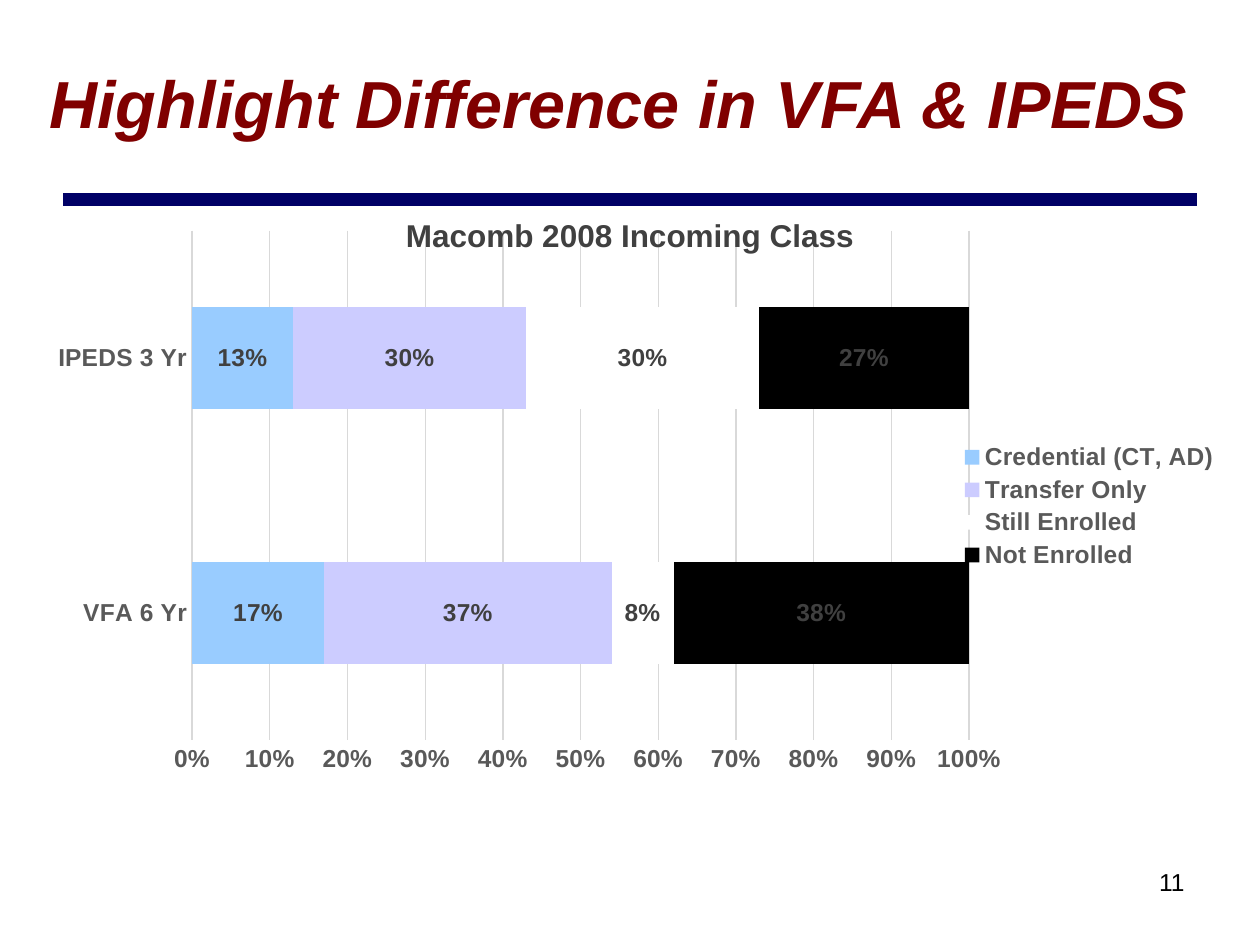
from pptx import Presentation, util as u, oxml
from pptx.chart import data
from pptx.dml import color as dml
from pptx.enum import chart as charts, shapes, text
from pptx.oxml import ns


def rgb(hex_string):
    return dml.RGBColor.from_string(hex_string)


def format_font(font, size, color, bold=False, italic=False):
    font.name = "Arial"
    font.size = u.Pt(size)
    font.bold = bold
    font.italic = italic
    font.color.rgb = rgb(color)


def write_text(frame, content, align="LEFT", anchor="TOP", **font_format):
    frame.word_wrap = True
    frame.vertical_anchor = getattr(text.MSO_ANCHOR, anchor)
    paragraph = frame.paragraphs[0]
    paragraph.alignment = getattr(text.PP_ALIGN, align)
    run = paragraph.add_run()
    run.text = content
    format_font(run.font, **font_format)


class SlideBuilder:
    axis_font = dict(size=14, color="595959", bold=True)
    label_font = dict(size=14, color="404040", bold=True)

    def __init__(self, presentation):
        self.slide = presentation.slides.add_slide(presentation.slide_layouts[5])

    def title(self, content, left, top, width, height):
        shape = self.slide.shapes.title
        shape.left, shape.top = u.Pt(left), u.Pt(top)
        shape.width, shape.height = u.Pt(width), u.Pt(height)
        write_text(shape.text_frame, content, anchor="MIDDLE",
                   size=38, color="800000", bold=True, italic=True)
        shape.text_frame.auto_size = text.MSO_AUTO_SIZE.NONE

    def text_box(self, content, left, top, width, height, **text_format):
        shape = self.slide.shapes.add_textbox(
            u.Pt(left), u.Pt(top), u.Pt(width), u.Pt(height))
        write_text(shape.text_frame, content, **text_format)

    def rule(self, left, right, y, color, weight):
        line = self.slide.shapes.add_connector(
            shapes.MSO_CONNECTOR.STRAIGHT, u.Pt(left), u.Pt(y), u.Pt(right), u.Pt(y))
        line.line.color.rgb = rgb(color)
        line.line.width = u.Pt(weight)
        line.element.spPr.append(oxml.parse_xml(f"<a:effectLst {ns.nsdecls('a')}/>"))

    def stacked_bars(self, categories, series, plot_area, left, top, width, height):
        chart_data = data.CategoryChartData(number_format="0%")
        chart_data.categories = categories
        for name, values, _ in series:
            chart_data.add_series(name, values)
        chart = self.slide.shapes.add_chart(
            charts.XL_CHART_TYPE.BAR_STACKED_100,
            u.Pt(left), u.Pt(top), u.Pt(width), u.Pt(height), chart_data).chart
        chart.has_title = False
        format_font(chart.font, 10, "000000")

        plot = chart.plots[0]
        plot.gap_width, plot.overlap = 150, 100
        plot.vary_by_categories = False
        for bar, (_, _, color) in zip(plot.series, series):
            bar.format.fill.solid()
            bar.format.fill.fore_color.rgb = rgb(color)
        plot.has_data_labels = True
        labels = plot.data_labels
        labels.show_value = True
        labels.number_format, labels.number_format_is_linked = "0%", False
        format_font(labels.font, **self.label_font)

        for axis in (chart.category_axis, chart.value_axis):
            axis.major_tick_mark = axis.minor_tick_mark = charts.XL_TICK_MARK.NONE
            axis.format.line.fill.background()
            format_font(axis.tick_labels.font, **self.axis_font)
        value_axis = chart.value_axis
        value_axis.minimum_scale, value_axis.maximum_scale = 0, 1
        value_axis.major_unit = 0.1
        value_axis.tick_labels.number_format = "0%"
        value_axis.tick_labels.number_format_is_linked = False
        value_axis.major_gridlines.format.line.color.rgb = rgb("D9D9D9")
        value_axis.major_gridlines.format.line.width = u.Pt(0.75)

        chart.has_legend = True
        chart.legend.position = charts.XL_LEGEND_POSITION.RIGHT
        chart.legend.include_in_layout = False
        format_font(chart.legend.font, **self.axis_font)
        self.place_plot(chart, plot_area)

    def place_plot(self, chart, plot_area):
        area = chart.element.xpath("c:chart/c:plotArea")[0]
        for layout in area.xpath("c:layout"):
            area.remove(layout)
        sizes = "".join(f'<c:{key} val="{value}"/>' for key, value in zip("xywh", plot_area))
        area.insert(0, oxml.parse_xml(
            f'<c:layout {ns.nsdecls("c")}><c:manualLayout><c:layoutTarget val="inner"/>'
            f'<c:xMode val="edge"/><c:yMode val="edge"/>{sizes}'
            "</c:manualLayout></c:layout>"))


def main():
    presentation = Presentation()
    presentation.slide_width, presentation.slide_height = u.Pt(720), u.Pt(540)
    builder = SlideBuilder(presentation)
    builder.rule(36, 684, 114, "000066", 7)
    builder.title("Highlight Difference in VFA & IPEDS", 21, 24, 699, 68)
    builder.text_box("11", 516, 492, 168, 37, align="RIGHT", size=14, color="000000")
    builder.stacked_bars(
        ["VFA 6 Yr", "IPEDS 3 Yr"],
        [("Credential (CT, AD)", (0.17, 0.13), "99CCFF"),
         ("Transfer Only", (0.37, 0.30), "CCCCFF"),
         ("Still Enrolled", (0.08, 0.30), "FFFFFF"),
         ("Not Enrolled", (0.38, 0.27), "000000")],
        (0.13, 0.035, 0.65, 0.86), 21, 120, 683, 338.5)
    builder.text_box("Macomb 2008 Incoming Class", 36, 120, 648, 29,
                     align="CENTER", size=18, color="404040", bold=True)
    presentation.save("out.pptx")


if __name__ == "__main__":
    main()
